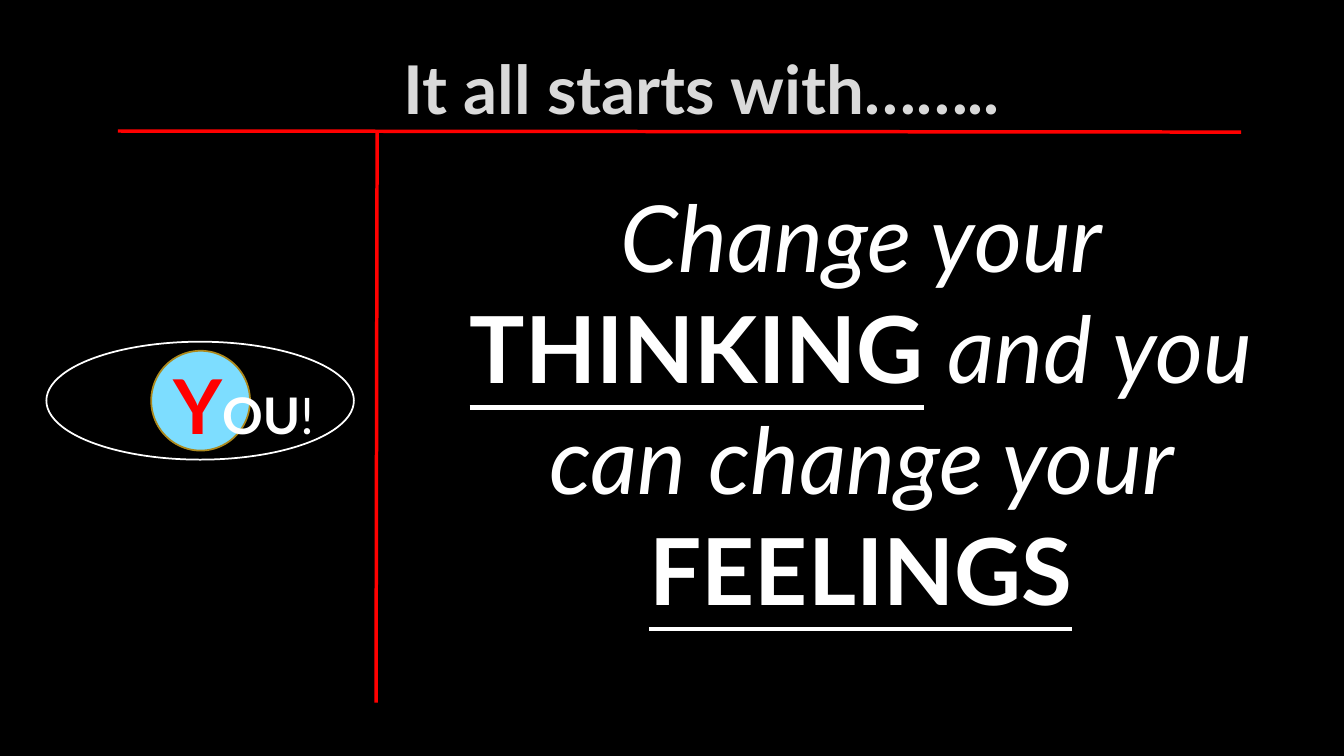
from pptx import Presentation
from pptx.dml.color import RGBColor as Rgb
from pptx.enum.shapes import MSO_CONNECTOR as Link, MSO_SHAPE as Form
from pptx.enum.text import MSO_AUTO_SIZE as Fit, PP_ALIGN as Align
from pptx.oxml.ns import qn
from pptx.util import Inches, Pt
from lxml.etree import SubElement as Sub

WIDE, HIGH = Inches(13.33), Inches(7.5)
HUES = {"black": "000000", "white": "FFFFFF", "red": "FF0000",
        "grey": "DADADA", "sky": "7DDDFF", "gold": "AC881C"}


def tint(name):
    return Rgb.from_string(HUES[name])


def place(*parts):
    return [round(part / 100 * (HIGH if n % 2 else WIDE))
            for n, part in enumerate(parts)]


def rule(slide, *ends):
    line = slide.shapes.add_connector(Link.STRAIGHT, *place(*ends))
    line.line.color.rgb = tint("red")
    line.line.width = Pt(2.5)
    Sub(line._element.spPr, qn("a:effectLst"))


def disc(slide, form, box, fill, edge):
    shape = slide.shapes.add_shape(form, *place(*box))
    shape.shadow.inherit = False
    shape.fill.solid()
    shape.fill.fore_color.rgb = tint(fill)
    shape.line.color.rgb = tint(edge)
    shape.line.width = Pt(1.25)


def label(slide, box, runs, align=Align.CENTER, wrap=True):
    frame = slide.shapes.add_textbox(*place(*box)).text_frame
    frame.word_wrap = wrap
    frame.auto_size = Fit.NONE
    para = frame.paragraphs[0]
    para.alignment = align
    for text, size, hue, style in runs:
        run = para.add_run()
        run.text = text
        look = {"name": "Lato", "size": Pt(size), **style}
        for key, value in look.items():
            setattr(run.font, key, value)
        run.font.color.rgb = tint(hue)


def main():
    deck = Presentation()
    deck.slide_width, deck.slide_height = WIDE, HIGH
    slide = deck.slides.add_slide(deck.slide_layouts[6])
    slide.background.fill.solid()
    slide.background.fill.fore_color.rgb = tint("black")

    bold = {"bold": True}
    slant = {"italic": True}
    strong = {"bold": True, "underline": True}

    label(slide, (22.36, 5.6, 59.71, 13.2),
          [("It all starts with……..", 48, "grey", bold)])
    rule(slide, 8.78, 17.33, 92.35, 17.47)
    disc(slide, Form.OVAL, (3.45, 45.2, 22.88, 15.6), "black", "white")
    disc(slide, Form.FLOWCHART_CONNECTOR, (11.25, 46.4, 7.35, 13.2),
         "sky", "gold")
    label(slide, (12.15, 46.8, 12.9, 13.47),
          [("Y", 54, "red", bold), ("OU", 36, "white", bold),
           ("!", 36, "white", {})], Align.LEFT, False)
    label(slide, (33.68, 23.2, 60.77, 60.53),
          [(text, 66, "white", style) for text, style in (
              ("Change your ", slant), ("THINKING", strong), (" ", {}),
              ("and you can change your ", slant), ("FEELINGS", strong))])
    rule(slide, 28.06, 17.33, 27.98, 92.93)
    deck.save("out.pptx")


if __name__ == "__main__":
    main()
